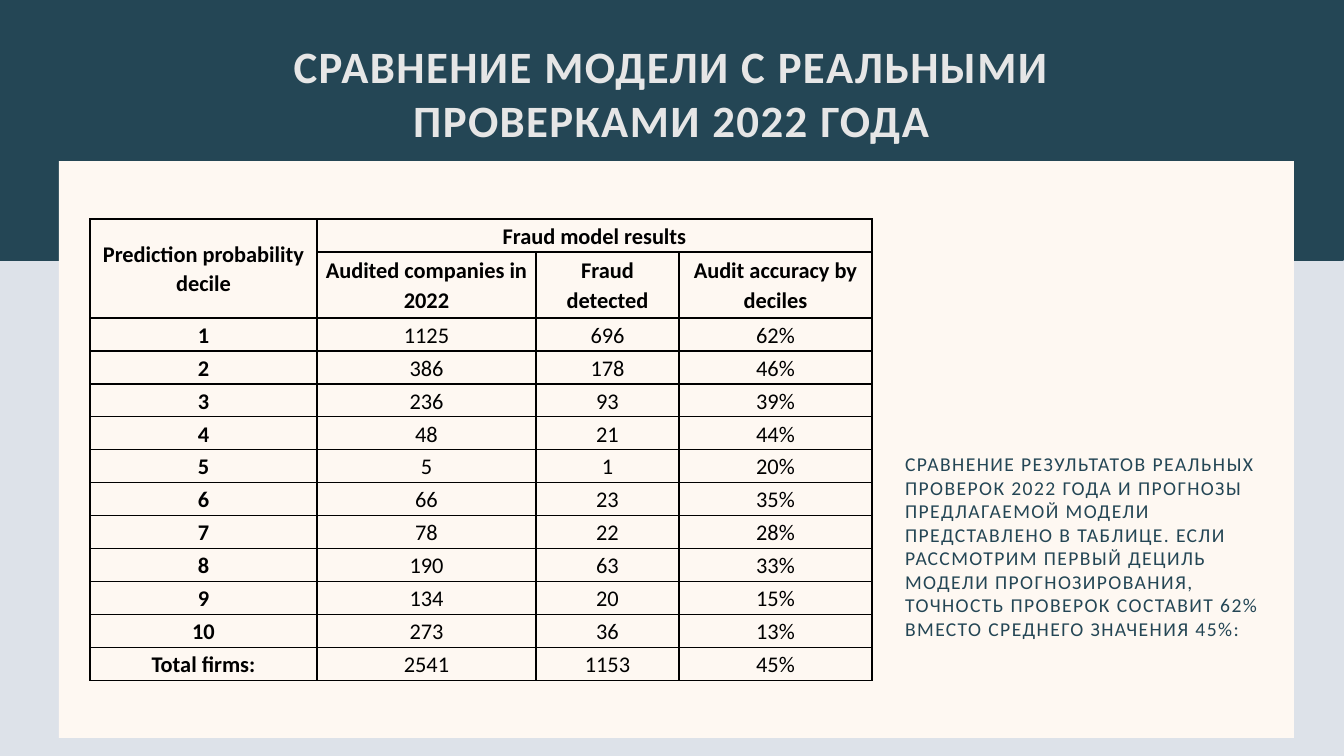
from dataclasses import dataclass

from lxml.etree import SubElement
from pptx import Presentation
from pptx.dml.color import RGBColor
from pptx.enum.shapes import MSO_SHAPE as Shp
from pptx.enum.text import MSO_ANCHOR as Anchor, MSO_AUTO_SIZE as Auto, PP_ALIGN as Align
from pptx.oxml.ns import qn
from pptx.util import Pt

SCALE = 914400 / 100.8
FONT = "Calibri"
TEAL, CREAM, MIST, PALE, BLACK = "244655", "FEF8F2", "DDE2E9", "E6E6E6", "000000"


@dataclass
class Box:
    x: int
    y: int
    w: int
    h: int

    def emu(self) -> list[int]:
        return [px(n) for n in (self.x, self.y, self.w, self.h)]


@dataclass
class Style:
    size: int
    tint: str
    bold: bool = False
    track: int = 0
    align: Align = Align.LEFT


def px(n: int) -> int:
    return round(n * SCALE)


def color(code: str) -> RGBColor:
    return RGBColor.from_string(code)


def panel(slide, box: Box, tint: str, line: int = 0) -> None:
    shape = slide.shapes.add_shape(Shp.RECTANGLE, *box.emu())
    shape.shadow.inherit = False
    shape.fill.solid()
    shape.fill.fore_color.rgb = color(tint)
    if line:
        shape.line.color.rgb = color(tint)
        shape.line.width = Pt(line)
    else:
        shape.line.fill.background()


def write(para, text: str, style: Style) -> None:
    para.alignment = style.align
    run = para.add_run()
    run.text = text
    font = run.font
    font.name, font.size, font.bold = FONT, Pt(style.size), style.bold
    font.color.rgb = color(style.tint)
    if style.track:
        font._element.set("spc", str(style.track * 100))


def place(slide, holder, box: Box, text: str, style: Style) -> None:
    """Move a placeholder to the front and fill it."""
    slide.shapes._spTree.append(holder._element)
    holder.left, holder.top, holder.width, holder.height = box.emu()
    frame = holder.text_frame
    frame.word_wrap = True
    frame.auto_size = Auto.SHAPE_TO_FIT_TEXT
    frame.vertical_anchor = Anchor.TOP
    para = frame.paragraphs[0]
    para.space_before = Pt(0)
    props = para._p.get_or_add_pPr()
    props.set("marL", "0")
    props.set("indent", "0")
    SubElement(props, qn("a:buNone"))
    write(para, text, style)


def border(cell) -> None:
    props = cell._tc.get_or_add_tcPr()
    for side in ("lnL", "lnR", "lnT", "lnB"):
        line = SubElement(props, qn(f"a:{side}"), w=str(Pt(1)))
        fill = SubElement(line, qn("a:solidFill"))
        SubElement(fill, qn("a:srgbClr"), val=BLACK)


# Table content
COLS = (227, 219, 143, 193)
HEADS = (
    ("Prediction probability decile", "Fraud model results", "", ""),
    ("", "Audited companies in 2022", "Fraud detected", "Audit accuracy by deciles"),
)
DATA = (
    (1125, 696, 62), (386, 178, 46), (236, 93, 39), (48, 21, 44), (5, 1, 20), (66, 23, 35),
    (78, 22, 28), (190, 63, 33), (134, 20, 15), (273, 36, 13), (2541, 1153, 45),
)


def grid(slide) -> None:
    names = [str(n) for n in range(1, len(DATA))] + ["Total firms:"]
    body = [(name, str(firms), str(fraud), f"{rate}%")
            for name, (firms, fraud, rate) in zip(names, DATA)]
    rows = [*HEADS, *body]
    highs = [66 if i == 1 else 33 for i in range(len(rows))]
    box = Box(90, 219, sum(COLS), sum(highs))
    table = slide.shapes.add_table(len(rows), len(COLS), *box.emu()).table
    table.first_row = table.horz_banding = False
    for col, wide in zip(table.columns, COLS):
        col.width = px(wide)
    for row, high in zip(table.rows, highs):
        row.height = px(high)
    for i, row in enumerate(rows):
        for j, text in enumerate(row):
            cell = table.cell(i, j)
            border(cell)
            cell.fill.background()
            cell.vertical_anchor = Anchor.MIDDLE
            cell.margin_left = cell.margin_right = px(7)
            cell.margin_top = cell.margin_bottom = 0
            if text:
                para = cell.text_frame.paragraphs[0]
                para.line_spacing = 1.07
                bold = i < len(HEADS) or j == 0
                write(para, text, Style(16, BLACK, bold, align=Align.CENTER))
    table.cell(0, 0).merge(table.cell(1, 0))
    table.cell(0, 1).merge(table.cell(0, 3))


def main() -> None:
    deck = Presentation()
    deck.slide_width, deck.slide_height = px(1344), px(756)
    slide = deck.slides.add_slide(deck.slide_layouts[1])
    title, note = slide.placeholders
    back = slide.background.fill
    back.solid()
    back.fore_color.rgb = color(MIST)

    # Header band and title
    panel(slide, Box(0, 0, 1343, 260), TEAL, 2)
    place(slide, title, Box(182, 34, 979, 119),
          "СРАВНЕНИЕ МОДЕЛИ С РЕАЛЬНЫМИ ПРОВЕРКАМИ 2022 ГОДА",
          Style(32, PALE, True, 1, Align.CENTER))

    # Card with note and table
    panel(slide, Box(59, 161, 1235, 577), CREAM)
    place(slide, note, Box(895, 447, 398, 224),
          "СРАВНЕНИЕ РЕЗУЛЬТАТОВ РЕАЛЬНЫХ ПРОВЕРОК 2022 ГОДА И ПРОГНОЗЫ "
          "ПРЕДЛАГАЕМОЙ МОДЕЛИ ПРЕДСТАВЛЕНО В ТАБЛИЦЕ. ЕСЛИ РАССМОТРИМ ПЕРВЫЙ "
          "ДЕЦИЛЬ МОДЕЛИ ПРОГНОЗИРОВАНИЯ, ТОЧНОСТЬ ПРОВЕРОК СОСТАВИТ 62% "
          "ВМЕСТО СРЕДНЕГО ЗНАЧЕНИЯ 45%:",
          Style(14, TEAL, track=1))
    grid(slide)
    deck.save("out.pptx")


if __name__ == "__main__":
    main()
